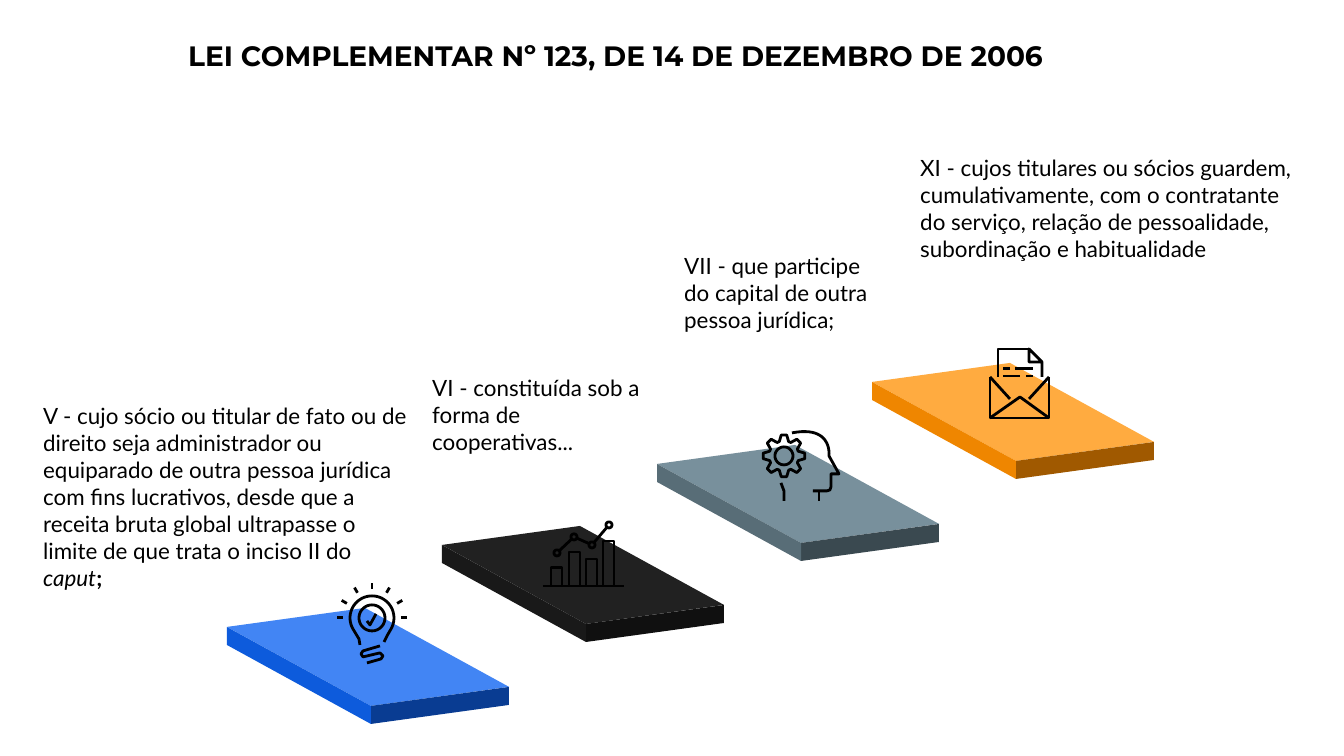
import math

import pptx
import pptx.dml.color
import pptx.enum.text
import pptx.util

EMU_PER_PX = 914400 / 134.4
RGBColor = pptx.dml.color.RGBColor

BLACK = RGBColor(0x00, 0x00, 0x00)
BLUE = RGBColor(0x42, 0x85, 0xF4)
BLUE_DARK = RGBColor(0x09, 0x3C, 0x92)
BLUE_MID = RGBColor(0x0D, 0x5B, 0xDC)
COAL = RGBColor(0x21, 0x21, 0x21)
COAL_DARK = RGBColor(0x10, 0x10, 0x10)
COAL_MID = RGBColor(0x19, 0x19, 0x19)
SLATE = RGBColor(0x78, 0x90, 0x9C)
SLATE_DARK = RGBColor(0x3A, 0x49, 0x50)
SLATE_MID = RGBColor(0x58, 0x6D, 0x77)
ORANGE = RGBColor(0xFF, 0xAB, 0x40)
ORANGE_DARK = RGBColor(0xA0, 0x59, 0x00)
ORANGE_MID = RGBColor(0xEF, 0x86, 0x00)

SLAB_FACES = [
    [(144, 98), (0, 19), (138, 0), (282, 79)],
    [(282, 79), (282, 97), (144, 116), (144, 98)],
    [(144, 116), (0, 37), (0, 19), (144, 98)],
]


def px(length):
    return pptx.util.Emu(round(length * EMU_PER_PX))


def polar(center, radius, degrees):
    angle = math.radians(degrees)
    return center[0] + radius * math.cos(angle), center[1] + radius * math.sin(angle)


def arc(center, radius, start, end):
    return [polar(center, radius, start + (end - start) * n / 36) for n in range(37)]


def circle(center, radius):
    return arc(center, radius, 0, 360)[:-1], True


def bezier(a, b, c, d):
    steps = [n / 24 for n in range(25)]
    return [
        tuple(
            (1 - t) ** 3 * a[k] + 3 * (1 - t) ** 2 * t * b[k]
            + 3 * (1 - t) * t ** 2 * c[k] + t ** 3 * d[k]
            for k in (0, 1)
        )
        for t in steps
    ]


def bulb_strokes():
    center = (35, 35)
    glass = [(23, 62), (22, 56)] + arc(center, 22, 150, 390) + [(50, 53), (47, 59)]
    screw = [(43, 63), (26, 68), (24, 71), (26, 74), (43, 70), (46, 73), (44, 76), (30, 80)]
    check = [(30, 38), (33, 42), (39, 31)]
    rays = [([polar(center, 29, a), polar(center, 35, a)], False) for a in range(180, 361, 30)]
    return [(glass, False), circle(center, 13), (check, False), (screw, False)] + rays


def chart_strokes():
    strokes = [([(0, 65), (81, 65)], False)]
    for left, top in [(8, 47), (26, 31), (43, 38), (60, 20)]:
        strokes.append(([(left, 65), (left, top), (left + 11, top), (left + 11, 65)], True))
    nodes = [(14, 32), (31, 16), (49, 24), (66, 4)]
    strokes += [circle(node, 3) for node in nodes]
    for a, b in zip(nodes, nodes[1:]):
        heading = math.degrees(math.atan2(b[1] - a[1], b[0] - a[0]))
        strokes.append(([polar(a, 3, heading), polar(b, -3, heading)], False))
    return strokes


def head_strokes():
    center = (21, 25)
    face = bezier((29, 2), (70, -6), (66, 25), (66, 25)) + [
        (76, 43), (68, 43), (68, 56), (67, 59), (64, 60), (50, 60)]
    gear = [
        polar(center, radius, tooth + offset)
        for tooth in range(0, 360, 45)
        for radius, offset in [(15, -18), (21, -7.5), (21, 7.5), (15, 18)]
    ]
    return [
        (face, False),
        ([(56, 60), (56, 70)], False),
        ([(21, 70), (21, 60), (18, 52)], False),
        (gear, True),
        circle(center, 9),
    ]


def letter_strokes():
    lines = [
        [(59, 28), (59, 69), (0, 69), (0, 28)],
        [(59, 69), (30, 48), (0, 69)],
        [(59, 28), (39, 50)],
        [(0, 28), (20, 50)],
        [(52, 28), (52, 13), (39, 0), (39, 13), (52, 13)],
        [(39, 0), (8, 0), (8, 28)],
        [(20, 20), (13, 20)],
        [(43, 20), (25, 20)],
        [(13, 27), (30, 27)],
        [(43, 27), (36, 27)],
    ]
    return [(line, False) for line in lines]


def draw_outline(slide, left, top, strokes):
    builder = None
    for points, closed in strokes:
        start, *rest = [(px(x), px(y)) for x, y in points]
        if builder is None:
            builder = slide.shapes.build_freeform(*start, scale=1.0)
        else:
            builder.move_to(*start)
        builder.add_line_segments(rest, close=closed)
    outline = builder.convert_to_shape(px(left), px(top))
    outline.shadow.inherit = False
    return outline


def draw_slab(slide, left, top, colors):
    for points, color in zip(SLAB_FACES, colors):
        face = draw_outline(slide, left, top, [(points, True)])
        face.fill.solid()
        face.fill.fore_color.rgb = color
        face.line.fill.background()


def draw_icon(slide, left, top, strokes):
    icon = draw_outline(slide, left, top, strokes)
    icon.fill.background()
    icon.line.color.rgb = BLACK
    icon.line.width = pptx.util.Pt(1.5)


def draw_text(slide, box, runs, font_name, size):
    frame = slide.shapes.add_textbox(*map(px, box)).text_frame
    frame.word_wrap = True
    frame.auto_size = pptx.enum.text.MSO_AUTO_SIZE.SHAPE_TO_FIT_TEXT
    for wording, bold, italic in runs:
        run = frame.paragraphs[0].add_run()
        run.text = wording
        run.font.name = font_name
        run.font.size = pptx.util.Pt(size)
        run.font.bold = bold
        run.font.italic = italic
        run.font.color.rgb = BLACK


def draw_step(slide, left, top, colors, icon_at, strokes, clause_box, clause):
    draw_slab(slide, left, top, colors)
    draw_icon(slide, left + icon_at[0], top + icon_at[1], strokes)
    x, y, width, height = clause_box
    draw_text(slide, (left + x, top + y, width, height), clause, "Lato", 12)


def main():
    deck = pptx.Presentation()
    deck.slide_width, deck.slide_height = px(1344), px(756)
    slide = deck.slides.add_slide(deck.slide_layouts[6])
    title = "LEI COMPLEMENTAR Nº 123, DE 14 DE DEZEMBRO DE 2006"
    draw_text(slide, (175, 32, 995, 47), [(title, True, False)], "Montserrat", 15)
    steps = [
        ((BLUE, BLUE_DARK, BLUE_MID), (110, -25), bulb_strokes(), (-197, -212, 398, 203), [
            ("V - cujo sócio ou titular de fato ou de direito seja administrador ou equiparado "
             "de outra pessoa jurídica com fins lucrativos, desde que a receita bruta global "
             "ultrapasse o limite de que trata o inciso II do ", False, False),
            ("caput", False, True),
            (";", True, False)]),
        ((COAL, COAL_DARK, COAL_MID), (101, -5), chart_strokes(), (-23, -158, 239, 95), [
            ("VI - constituída sob a forma de cooperativas...", False, False)]),
        ((SLATE, SLATE_DARK, SLATE_MID), (106, -14), head_strokes(), (14, -199, 214, 122), [
            ("VII - que participe do capital de outra pessoa jurídica;", False, False)]),
        ((ORANGE, ORANGE_DARK, ORANGE_MID), (118, -14), letter_strokes(), (35, -215, 411, 149), [
            ("XI - cujos titulares ou sócios guardem, cumulativamente, com o contratante do "
             "serviço, relação de pessoalidade, subordinação e habitualidade", False, False)]),
    ]
    for n, step in enumerate(steps):
        draw_step(slide, 227 + 215 * n, 608 + -163 * n // 2, *step)
    deck.save("out.pptx")


if __name__ == "__main__":
    main()
